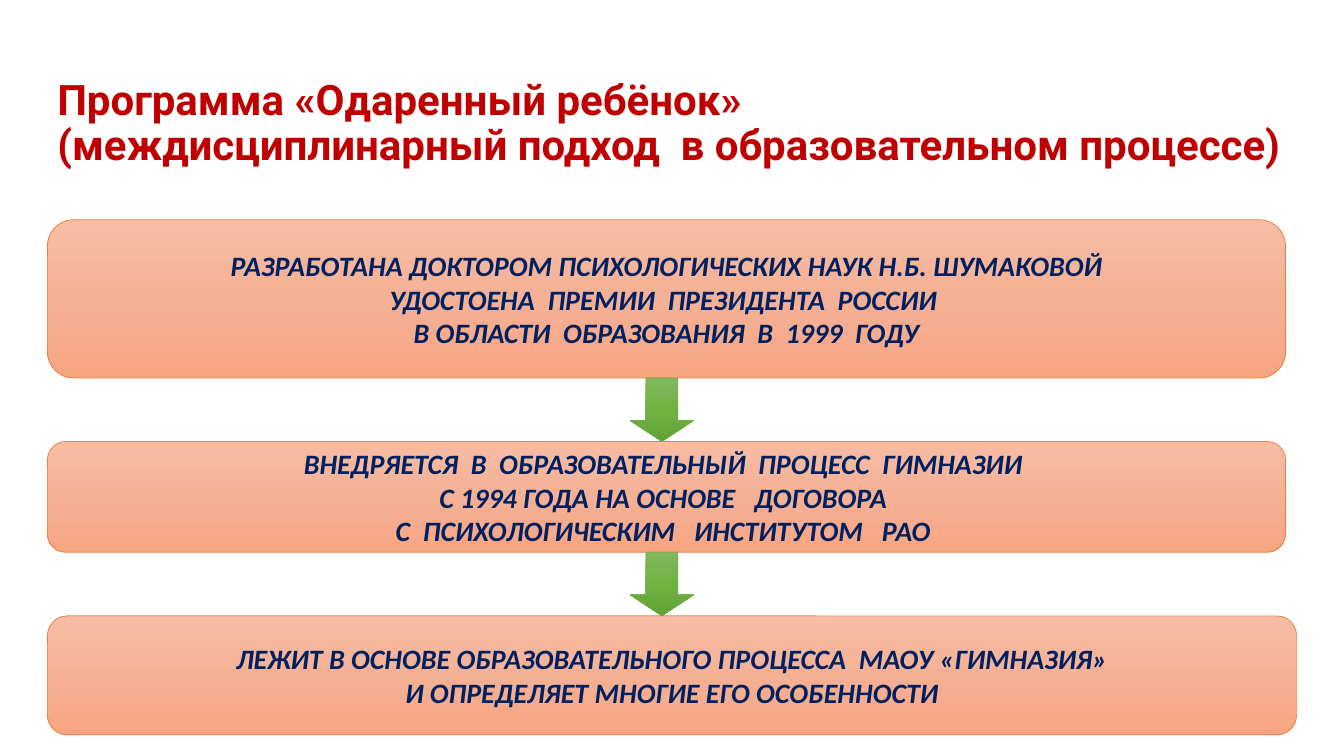
"""Build the slide on the gifted child programme: three stages joined by arrows."""
from copy import deepcopy

from pptx import Presentation
from pptx.dml.color import RGBColor
from pptx.enum.shapes import MSO_SHAPE
from pptx.enum.text import MSO_ANCHOR, PP_ALIGN
from pptx.oxml.ns import qn
from pptx.util import Pt

TITLE = "Программа «Одаренный ребёнок» \v(междисциплинарный подход  в образовательном процессе)"
STAGES = [
    (218, 1228, 157, [
        "РАЗРАБОТАНА ДОКТОРОМ ПСИХОЛОГИЧЕСКИХ НАУК Н.Б. ШУМАКОВОЙ",
        "УДОСТОЕНА  ПРЕМИИ  ПРЕЗИДЕНТА  РОССИИ ",
        "В ОБЛАСТИ  ОБРАЗОВАНИЯ  В  1999  ГОДУ",
    ]),
    (438, 1228, 110, [
        "ВНЕДРЯЕТСЯ  В  ОБРАЗОВАТЕЛЬНЫЙ  ПРОЦЕСС  ГИМНАЗИИ ",
        "С 1994 ГОДА НА ОСНОВЕ   ДОГОВОРА ",
        "С  ПСИХОЛОГИЧЕСКИМ   ИНСТИТУТОМ   РАО ",
    ]),
    (611, 1239, 118, [
        "ЛЕЖИТ В ОСНОВЕ ОБРАЗОВАТЕЛЬНОГО ПРОЦЕССА  МАОУ «ГИМНАЗИЯ»",
        "И ОПРЕДЕЛЯЕТ МНОГИЕ ЕГО ОСОБЕННОСТИ",
    ]),
]

PX = 9144
LEFT = 47
ARROW_LEFT, ARROW_SIZE = 625, 63

RED = RGBColor(0xC0, 0x00, 0x00)
NAVY = RGBColor(0x00, 0x20, 0x60)
ORANGE = RGBColor(0xED, 0x7D, 0x31)
GREEN = RGBColor(0x70, 0xAD, 0x47)
PEACH_SHADES = [RGBColor(0xF7, 0xBD, 0xA5), RGBColor(0xF5, 0xB1, 0x96), RGBColor(0xF8, 0xA5, 0x82)]
GREEN_SHADES = [RGBColor(0x81, 0xB8, 0x61), RGBColor(0x6F, 0xB2, 0x42), RGBColor(0x62, 0xA3, 0x36)]


def px(*lengths):
    return [length * PX for length in lengths]


def add_gradient_shape(slide, kind, box, shades, edge):
    sp = slide.shapes.add_shape(kind, *px(*box))
    sp.shadow.inherit = False
    sp.fill.gradient()
    sp.fill.gradient_angle = 270
    stops = sp._element.spPr.find(qn("a:gradFill")).find(qn("a:gsLst"))
    stops.insert(1, deepcopy(stops[0]))
    for stop, position, shade in zip(sp.fill.gradient_stops, (0, 0.5, 1), shades):
        stop.position = position
        stop.color.rgb = shade
    sp.line.color.rgb = edge
    sp.line.width = Pt(0.5)
    return sp


def set_font(p, name, size, color):
    p.font.name = name
    p.font.size = Pt(size)
    p.font.bold = True
    p.font.color.rgb = color


def add_stage(slide, top, width, height, lines):
    box = (LEFT, top, width, height)
    sp = add_gradient_shape(slide, MSO_SHAPE.ROUNDED_RECTANGLE, box, PEACH_SHADES, ORANGE)
    tf = sp.text_frame
    tf.word_wrap = False
    tf.vertical_anchor = MSO_ANCHOR.MIDDLE
    tf.text = "\n".join(lines)
    for p in tf.paragraphs:
        p.alignment = PP_ALIGN.CENTER
        set_font(p, "Calibri", 20, NAVY)
        p.font.italic = True


def add_title(slide):
    tf = slide.shapes.add_textbox(*px(LEFT, 52, 1300, 143)).text_frame
    tf.word_wrap = True
    tf.vertical_anchor = MSO_ANCHOR.MIDDLE
    tf.text = TITLE
    p = tf.paragraphs[0]
    p.line_spacing = 0.9
    set_font(p, "Roboto", 30, RED)


def main():
    prs = Presentation()
    prs.slide_width, prs.slide_height = px(1333, 750)
    slide = prs.slides.add_slide(prs.slide_layouts[6])
    for stage in STAGES:
        add_stage(slide, *stage)
    for top, _, height, _ in STAGES[:-1]:
        box = (ARROW_LEFT, top + height, ARROW_SIZE, ARROW_SIZE)
        sp = add_gradient_shape(slide, MSO_SHAPE.DOWN_ARROW, box, GREEN_SHADES, GREEN)
        sp.adjustments[1] = 0.33
    add_title(slide)
    prs.save("out.pptx")


if __name__ == "__main__":
    main()
